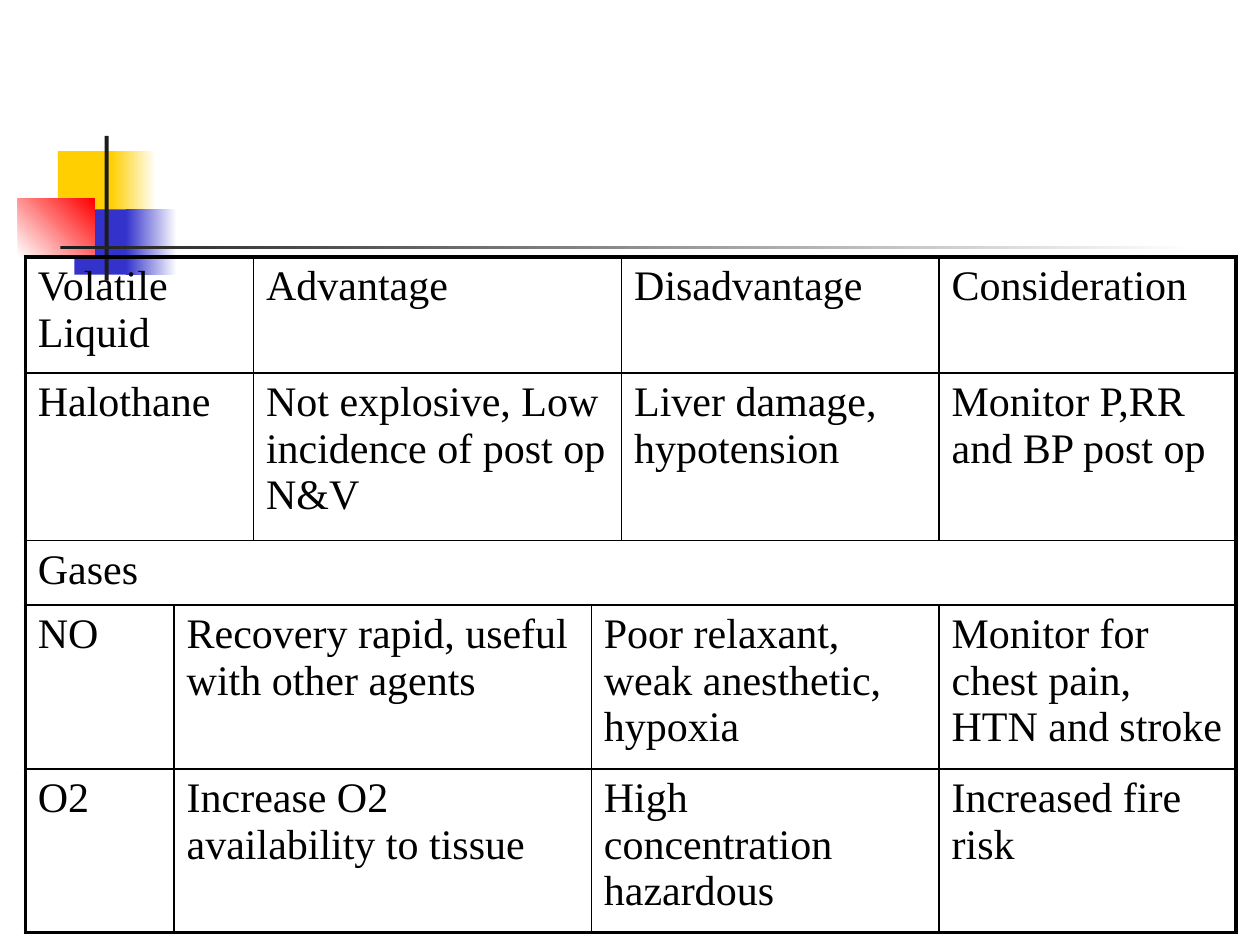
from lxml import etree
from pptx import Presentation
from pptx.dml.color import RGBColor
from pptx.enum.shapes import MSO_SHAPE
from pptx.oxml.ns import qn
from pptx.util import Cm, Pt

RECTANGLE = MSO_SHAPE.RECTANGLE
FONT = "Times New Roman"
BLACK, WHITE = "000000", "FFFFFF"
YELLOW, BLUE, RED, CHARCOAL = "FFCF01", "3333CC", "FF0000", "1C1C1C"
NO_STYLE = "{2D5ABB26-0587-4C30-8999-92F81FD0307C}"
THIN, THICK = Pt(1), Pt(2.25)


def rgb(value):
    return RGBColor.from_string(value)


def add_border(cell, side, width):
    """Draw one black cell edge; side is L, R, T or B, in that order."""
    properties = cell._tc.get_or_add_tcPr()
    line = etree.SubElement(properties, qn(f"a:ln{side}"), w=str(width))
    fill = etree.SubElement(line, qn("a:solidFill"))
    etree.SubElement(fill, qn("a:srgbClr"), val=BLACK)


presentation = Presentation()
presentation.slide_width = Cm(25.4)
presentation.slide_height = Cm(19.05)
slide = presentation.slides.add_slide(presentation.slide_layouts[6])

# Decoration: left, top, width, height, colours (two make a gradient), angle
decorations = [
    (1.17, 3.05, 1.22, 1.32, [YELLOW], 0),
    (2.24, 3.05, 0.91, 1.32, [YELLOW, WHITE], 0),
    (1.5, 4.22, 1.17, 1.32, [BLUE], 0),
    (2.54, 4.22, 1.02, 1.32, [BLUE, WHITE], 0),
    (0.36, 4.01, 1.55, 1.17, [WHITE, RED], 45),
    (2.11, 2.74, 0.08, 2.92, [CHARCOAL], 0),
    (1.22, 4.95, 22.86, 0.08, [CHARCOAL, WHITE], 0),
]
for left, top, width, height, colours, angle in decorations:
    shape = slide.shapes.add_shape(
        RECTANGLE, Cm(left), Cm(top), Cm(width), Cm(height))
    shape.shadow.inherit = False
    shape.line.fill.background()
    if len(colours) == 1:
        shape.fill.solid()
        shape.fill.fore_color.rgb = rgb(colours[0])
    else:
        shape.fill.gradient()
        shape.fill.gradient_angle = angle
        for stop, colour, position in zip(shape.fill.gradient_stops, colours, (0, 1)):
            stop.color.rgb = rgb(colour)
            stop.position = position

# Table: each cell is its text and the number of columns it spans
column_widths = [3, 1.6, 6.81, 0.61, 6.4, 5.99]
row_heights = [2.34, 3.38, 1.3, 3.3, 3.3]
rows = [
    [("Volatile Liquid", 2), ("Advantage", 2), ("Disadvantage", 1),
     ("Consideration", 1)],
    [("Halothane", 2), ("Not explosive, Low incidence of post op N&V", 2),
     ("Liver damage, hypotension", 1), ("Monitor P,RR and BP post op", 1)],
    [("Gases", 6)],
    [("NO", 1), ("Recovery rapid, useful with other agents", 2),
     ("Poor relaxant, weak anesthetic, hypoxia", 2),
     ("Monitor for chest pain, HTN and stroke", 1)],
    [("O2", 1), ("Increase O2 availability to tissue", 2),
     ("High concentration hazardous", 2), ("Increased fire risk", 1)],
]
row_count, column_count = len(row_heights), len(column_widths)
table = slide.shapes.add_table(
    row_count, column_count, Cm(0.51), Cm(5.18),
    Cm(sum(column_widths)), Cm(sum(row_heights))).table
table.first_row = False
table.horz_banding = False
table._tbl.tblPr.find(qn("a:tableStyleId")).text = NO_STYLE
for column, width in zip(table.columns, column_widths):
    column.width = Cm(width)
for row, height in zip(table.rows, row_heights):
    row.height = Cm(height)

for row_index, entries in enumerate(rows):
    column_index = 0
    for text, span in entries:
        cell = table.cell(row_index, column_index)
        next_column = column_index + span
        if span > 1:
            cell.merge(table.cell(row_index, next_column - 1))
        on_outline = {
            "L": column_index == 0,
            "R": next_column == column_count,
            "T": row_index == 0,
            "B": row_index == row_count - 1,
        }
        for side, is_outer in on_outline.items():
            add_border(cell, side, THICK if is_outer else THIN)
        cell.fill.background()
        run = cell.text_frame.paragraphs[0].add_run()
        run.text = text
        run.font.name = FONT
        run.font.size = Pt(24)
        run.font.color.rgb = rgb(BLACK)
        column_index = next_column

presentation.save("out.pptx")
